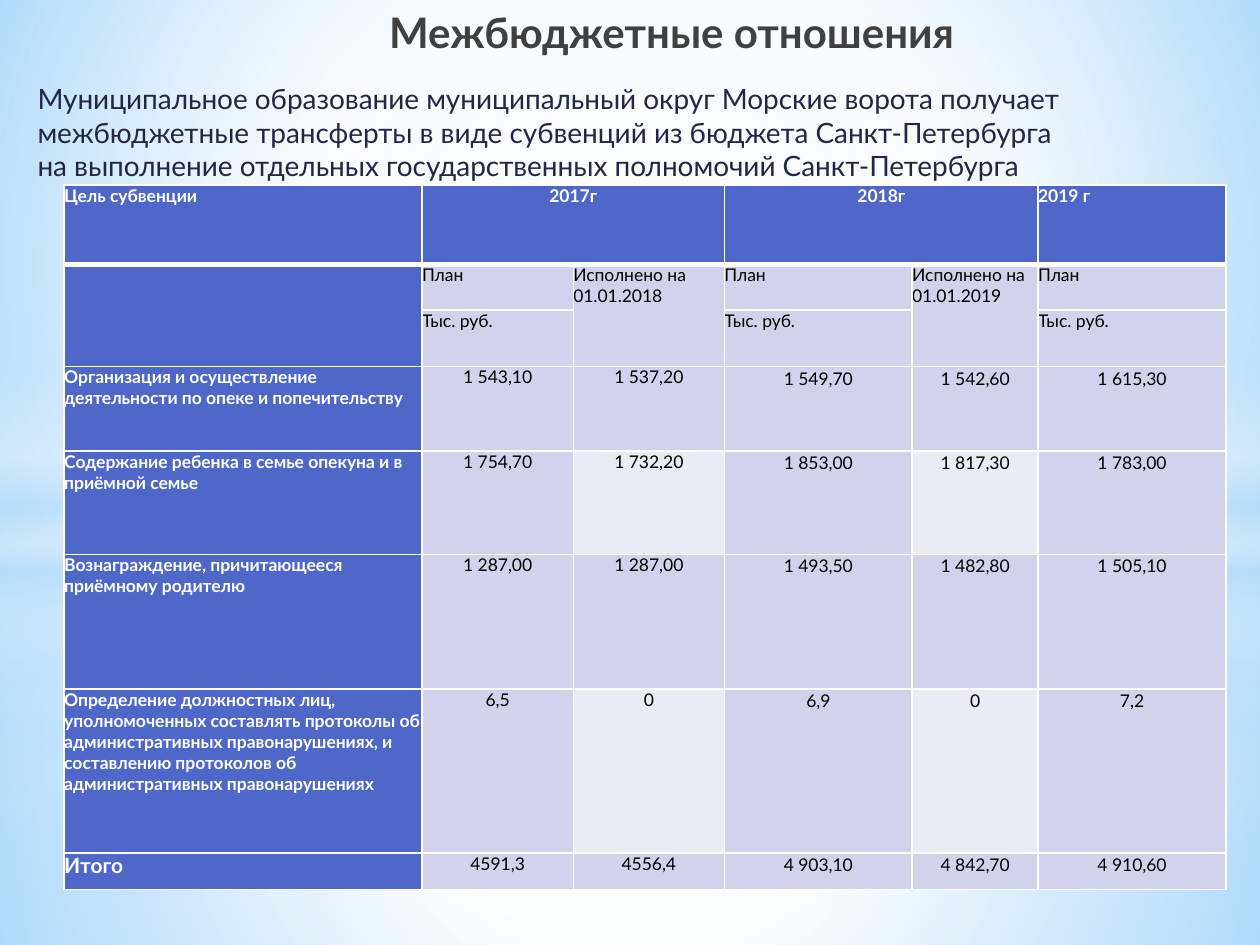
from lxml.etree import SubElement
from pptx import Presentation
from pptx.dml.color import RGBColor
from pptx.enum.shapes import MSO_SHAPE as Shape
from pptx.enum.text import PP_ALIGN as Align
from pptx.oxml import parse_xml
from pptx.oxml.ns import nsdecls, qn
from pptx.util import Inches, Pt

# Content
TITLE = "Межбюджетные отношения"
INTRO = ("Муниципальное образование муниципальный округ Морские ворота получает "
         "межбюджетные трансферты в виде субвенций из бюджета Санкт-Петербурга "
         "на выполнение отдельных государственных полномочий Санкт-Петербурга")
PLAN, UNIT = "План", "Тыс. руб."
HEADER = ["Цель субвенции", "2017г", "", "2018г", "", "2019 г"]
ROWS = [
    HEADER,
    ["", PLAN, "Исполнено на 01.01.2018", PLAN, "Исполнено на 01.01.2019", PLAN],
    ["", UNIT, "", UNIT, "", UNIT],
    ["Организация и осуществление деятельности по опеке и попечительству",
     "1 543,10", "1 537,20", "1 549,70", "1 542,60", "1 615,30"],
    ["Содержание ребенка в семье опекуна и в приёмной семье",
     "1 754,70", "1 732,20", "1 853,00", "1 817,30", "1 783,00"],
    ["Вознаграждение, причитающееся приёмному родителю",
     "1 287,00", "1 287,00", "1 493,50", "1 482,80", "1 505,10"],
    ["Определение должностных лиц, уполномоченных составлять протоколы об "
     "административных правонарушениях, и составлению протоколов об "
     "административных правонарушениях", "6,5", "0", "6,9", "0", "7,2"],
    ["Итого", "4591,3", "4556,4", "4 903,10", "4 842,70", "4 910,60"],
]
MERGES = [((0, 1), (0, 2)), ((0, 3), (0, 4)),
          ((1, 0), (2, 0)), ((1, 2), (2, 2)), ((1, 4), (2, 4))]
COL_WIDTHS = [2.84, 1.2, 1.2, 1.49, 1, 1.49]
ROW_HEIGHTS = [0.63, 0.36, 0.45, 0.67, 0.82, 1.07, 1.3, 0.29]
DONE_COLS, LIGHT_ROWS = (2, 4), (4, 6)

COLORS = {"white": "FFFFFF", "black": "000000", "title": "404040", "intro": "212745",
          "head": "4E67C8", "band": "D0D3EB", "light": "E9EBF5",
          "sky": "B4DCFA", "sky_mid": "9ED5FF", "sky_deep": "5BB9FF"}
FONT = "Lato"
WIDTH, HEIGHT = 10, 7.5

# Background layers: stops are (position, colour, opacity), all in percent
CENTRE = (50, 50, 50, 50)
BACKDROP = [(0, "sky_mid", 100), (60, "white", 100), (100, "sky_deep", 100)]
HORIZON = [(0, "white", 0), (29, "white", 30), (45, "sky", 40),
           (55, "white", 26), (65, "sky", 60), (100, "white", 0)]
# Horizon height, band top, opacity shift, end of the glow
SCENES = [(5.58, 4.12, 0, 56), (4.23, 2.9, 1, 54)]


def gradient(stops, focus=None):
    marks = "".join(
        f'<a:gs pos="{pos * 1000}"><a:srgbClr val="{COLORS[color]}">'
        f'<a:alpha val="{opacity * 1000}"/></a:srgbClr></a:gs>'
        for pos, color, opacity in stops)
    if focus:
        sides = " ".join(f'{side}="{share * 1000}"' for side, share in zip("ltrb", focus))
        course = f'<a:path path="circle"><a:fillToRect {sides}/></a:path>'
    else:
        course = '<a:lin ang="5400000" scaled="0"/>'
    return parse_xml(f'<a:gradFill {nsdecls("a")} rotWithShape="1">'
                     f'<a:gsLst>{marks}</a:gsLst>{course}</a:gradFill>')


def swap_fill(parent, new_fill):
    parent.replace(parent.find(qn("a:solidFill")), new_fill)


def add_layer(slide, kind, top, height, stops, focus=None):
    layer = slide.shapes.add_shape(kind, 0, Inches(top), Inches(WIDTH), Inches(height))
    layer.shadow.inherit = False
    layer.line.fill.background()
    layer.fill.solid()
    swap_fill(layer.element.spPr, gradient(stops, focus))


def write(frame, text, *, size, color, bold=False, align=Align.LEFT):
    frame.word_wrap = True
    paragraph = frame.paragraphs[0]
    paragraph.alignment = align
    run = paragraph.add_run()
    run.text = text
    run.font.name, run.font.size, run.font.bold = FONT, Pt(size), bold
    run.font.color.rgb = RGBColor.from_string(COLORS[color])


def add_text(slide, box, text, **style):
    write(slide.shapes.add_textbox(*map(Inches, box)).text_frame, text, **style)


def style_cell(cell, row, col):
    heading = row == 0 or col == 0
    cell.margin_left = cell.margin_right = cell.margin_top = cell.margin_bottom = 0
    if row > 2 and col > 2:
        cell.margin_left = cell.margin_right = cell.margin_top = Inches(0.01)
    # Borders, with a thick rule under the header
    for side in "LRTB":
        thick = (row, side) in ((0, "B"), (1, "T"))
        line = SubElement(cell._tc.get_or_add_tcPr(), qn(f"a:ln{side}"),
                          w=str(Pt(3 if thick else 1)))
        SubElement(SubElement(line, qn("a:solidFill")), qn("a:srgbClr"), val=COLORS["white"])
    light = row in LIGHT_ROWS and col in DONE_COLS
    cell.fill.solid()
    cell.fill.fore_color.rgb = RGBColor.from_string(
        COLORS["head" if heading else "light" if light else "band"])
    text = ROWS[row][col]
    if text:
        centred = (row > 2 and col > 0) or (row == 0 and 0 < col < 5)
        write(cell.text_frame, text, size=12 if text == "Итого" else 10, bold=heading,
              color="white" if heading else "black",
              align=Align.CENTER if centred else Align.LEFT)


def main():
    prs = Presentation()
    prs.slide_width, prs.slide_height = Inches(WIDTH), Inches(HEIGHT)
    slide = prs.slides.add_slide(prs.slide_layouts[6])

    # Sky
    slide.background.fill.solid()
    swap_fill(slide.element.find(".//" + qn("p:bgPr")), gradient(BACKDROP, (20, 10, 20, 60)))
    for horizon, band_top, shift, glow_end in SCENES:
        ground = [(0, "white", 91 + shift), (37, "white", 76 + shift), (100, "sky", 79 + shift)]
        heaven = [(0, "white", 89 + shift), (48, "white", 62 + shift), (100, "sky", 79 + shift)]
        glow = [(0, "white", 100), (glow_end, "white", 0)]
        add_layer(slide, Shape.RECTANGLE, horizon, HEIGHT - horizon, ground, CENTRE)
        add_layer(slide, Shape.RECTANGLE, 0, horizon, heaven, CENTRE)
        add_layer(slide, Shape.RECTANGLE, band_top, 2.5, HORIZON)
        add_layer(slide, Shape.OVAL, 1.75, 5.58, glow, CENTRE)

    # Title and introduction
    add_text(slide, (1.14, 0, 6.53, 0.5), TITLE, size=24, color="title",
             bold=True, align=Align.RIGHT)
    add_text(slide, (0.2, 0.6, 8.5, 3.94), INTRO, size=16, color="intro")

    # Subvention table
    box = (0.51, 1.47, sum(COL_WIDTHS), sum(ROW_HEIGHTS))
    table = slide.shapes.add_table(len(ROWS), len(HEADER), *map(Inches, box)).table
    for column, width in zip(table.columns, COL_WIDTHS):
        column.width = Inches(width)
    for line, height in zip(table.rows, ROW_HEIGHTS):
        line.height = Inches(height)
    for row in range(len(ROWS)):
        for col in range(len(HEADER)):
            style_cell(table.cell(row, col), row, col)
    for first, last in MERGES:
        table.cell(*first).merge(table.cell(*last))

    prs.save("out.pptx")


if __name__ == "__main__":
    main()
